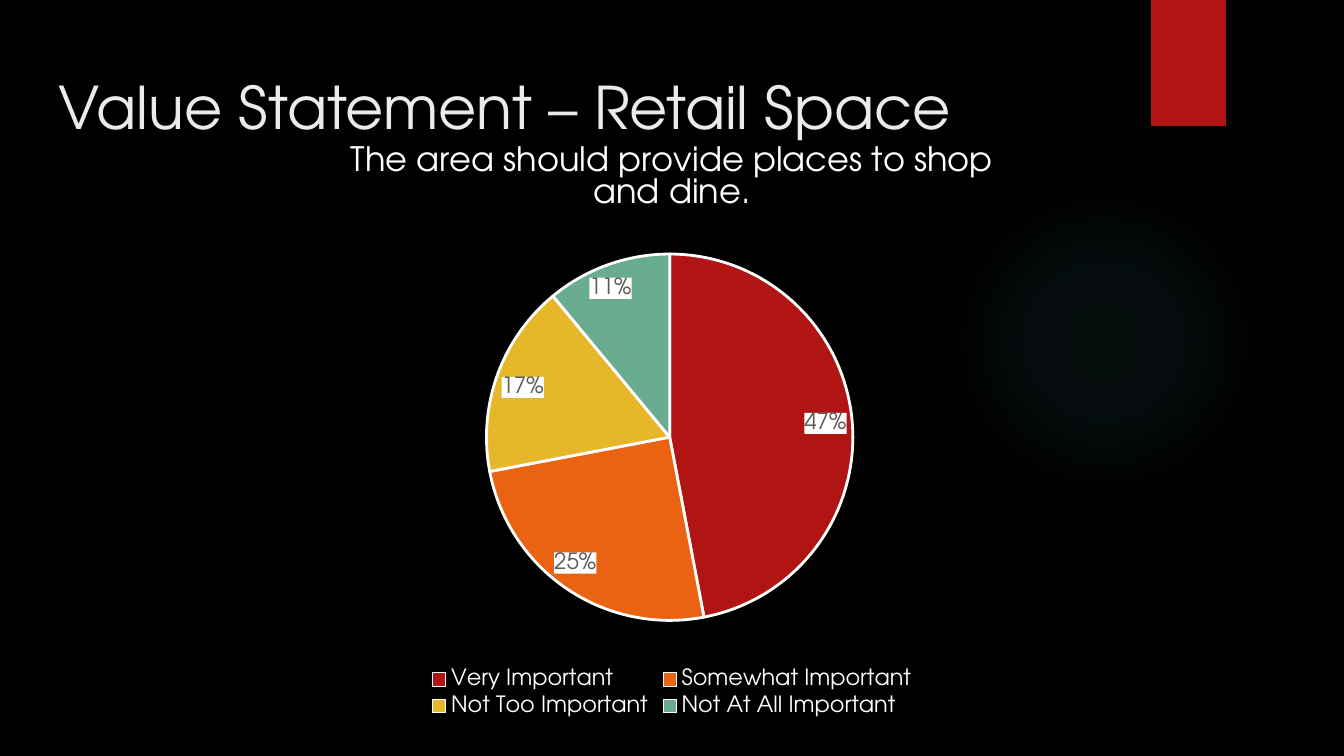
from dataclasses import dataclass

from lxml.etree import SubElement
from pptx import Presentation
from pptx.chart.data import CategoryChartData
from pptx.dml.color import RGBColor as Rgb
from pptx.enum.chart import XL_CHART_TYPE as ChartType
from pptx.enum.chart import XL_LABEL_POSITION as LabelPosition
from pptx.enum.chart import XL_LEGEND_POSITION as LegendPosition
from pptx.enum.shapes import MSO_SHAPE as Shape
from pptx.enum.text import MSO_ANCHOR as Anchor
from pptx.oxml import parse_xml
from pptx.oxml.ns import nsdecls, qn
from pptx.util import Pt


@dataclass(frozen=True)
class Theme:
    font: str = "TeX Gyre Adventor"
    background: str = "000000"
    accent: str = "B01513"
    glow: str = "50B9C1"
    heading: str = "EBEBEB"
    white: str = "FFFFFF"
    label: str = "595959"
    heading_size: float = 31.5
    chart_title_size: float = 18
    chart_size: float = 12


THEME = Theme()
HEADING = "Value Statement – Retail Space"
QUESTION = "The area should provide places to shop and dine."
ANSWERS = [
    ("Very Important", 47, THEME.accent),
    ("Somewhat Important", 25, "EA6312"),
    ("Not Too Important", 17, "E6B729"),
    ("Not At All Important", 11, "6AAC90"),
]

# Boxes are left, top, width, height in px
SLIDE_SIZE = (1344, 756)
GLOW_BOX = (949, 186, 310, 310)
RIBBON_BOX = (1151, 0, 75, 126)
HEADING_BOX = (46, 66, 1252, 85)
CHART_BOX = (224, 117, 896, 605)
HEADING_INSET = 13
GLOW_STOPS = [(0, 7), (36, 6), (69, 0)]  # position and opacity, percent
PLOT_LAYOUT = {"x": 0.293, "y": 0.226, "w": 0.409, "h": 0.607}


def px(length):
    return round(length * 914400 / 134.4)


def place(box):
    return [px(length) for length in box]


def paint(fill, color):
    fill.solid()
    fill.fore_color.rgb = Rgb.from_string(color)


def style(font, size, color):
    font.name = THEME.font
    font.size = Pt(size)
    font.color.rgb = Rgb.from_string(color)


def add_plain_shape(page, kind, box, color):
    shape = page.shapes.add_shape(kind, *place(box))
    shape.shadow.inherit = False
    shape.line.fill.background()
    paint(shape.fill, color)
    return shape


def add_glow(page):
    glow = add_plain_shape(page, Shape.OVAL, GLOW_BOX, THEME.glow)
    stops = "".join(
        f'<a:gs pos="{position * 1000}"><a:srgbClr val="{THEME.glow}">'
        f'<a:alpha val="{opacity * 1000}"/></a:srgbClr></a:gs>'
        for position, opacity in GLOW_STOPS
    )
    gradient = parse_xml(
        f'<a:gradFill {nsdecls("a")}><a:gsLst>{stops}</a:gsLst><a:path path="circle">'
        '<a:fillToRect l="50000" t="50000" r="50000" b="50000"/></a:path></a:gradFill>'
    )
    properties = glow.element.spPr
    properties.replace(properties.find(qn("a:solidFill")), gradient)


def add_ribbon(page):
    ribbon = add_plain_shape(page, Shape.RECTANGLE, RIBBON_BOX, THEME.accent)
    effects = ribbon.element.spPr.find(qn("a:effectLst"))
    effects.append(parse_xml(
        f'<a:outerShdw {nsdecls("a")} blurRad="38100" dist="25400" dir="5400000">'
        '<a:srgbClr val="000000"><a:alpha val="45000"/></a:srgbClr></a:outerShdw>'
    ))


def add_heading(page):
    frame = page.shapes.add_textbox(*place(HEADING_BOX)).text_frame
    frame.word_wrap = True
    frame.vertical_anchor = Anchor.TOP
    frame.margin_left = frame.margin_right = px(HEADING_INSET)
    frame.margin_top = frame.margin_bottom = px(HEADING_INSET)
    para = frame.paragraphs[0]
    para.text = HEADING
    para.line_spacing = 0.9
    style(para.font, THEME.heading_size, THEME.heading)


def fix_plot_area(chart):
    """Pin the inner plot area to its share of the chart."""
    plot_area = chart.element.find(".//" + qn("c:plotArea"))
    layout = plot_area.find(qn("c:layout"))
    if layout is None:
        layout = plot_area.makeelement(qn("c:layout"))
        plot_area.insert(0, layout)
    manual = SubElement(layout, qn("c:manualLayout"))
    settings = {"layoutTarget": "inner", "xMode": "edge", "yMode": "edge", **PLOT_LAYOUT}
    for name, value in settings.items():
        SubElement(manual, qn(f"c:{name}")).set("val", str(value))


def add_pie(page):
    names, values, colors = zip(*ANSWERS)
    data = CategoryChartData()
    data.categories = names
    data.add_series("Series 1", values)
    chart = page.shapes.add_chart(ChartType.PIE, *place(CHART_BOX), data).chart
    style(chart.font, THEME.chart_size, THEME.white)

    chart.has_title = True
    title = chart.chart_title
    title.include_in_layout = False
    para = title.text_frame.paragraphs[0]
    para.text = QUESTION
    para.font.bold = False
    style(para.font, THEME.chart_title_size, THEME.white)

    chart.has_legend = True
    chart.legend.position = LegendPosition.BOTTOM
    chart.legend.include_in_layout = False
    style(chart.legend.font, THEME.chart_size, THEME.white)

    plot = chart.plots[0]
    plot.vary_by_categories = True
    for index, color in enumerate(colors):
        slice_format = plot.series[0].points[index].format
        paint(slice_format.fill, color)
        paint(slice_format.line.fill, THEME.white)
        slice_format.line.width = Pt(1.5)

    labels = plot.series[0].data_labels
    labels.show_percentage = True
    labels.show_value = False
    labels.number_format = "0%"
    labels.number_format_is_linked = False
    labels.position = LabelPosition.BEST_FIT
    style(labels.font, THEME.chart_size, THEME.label)
    label_box = parse_xml(
        f'<c:spPr {nsdecls("c", "a")}><a:solidFill><a:srgbClr val="{THEME.white}"/>'
        "</a:solidFill></c:spPr>"
    )
    labels.font  # text properties follow the box in the schema
    labels._element.find(qn("c:txPr")).addprevious(label_box)
    fix_plot_area(chart)


def main():
    deck = Presentation()
    deck.slide_width, deck.slide_height = place(SLIDE_SIZE)
    page = deck.slides.add_slide(deck.slide_layouts[6])
    paint(page.background.fill, THEME.background)
    add_glow(page)
    add_ribbon(page)
    add_heading(page)
    add_pie(page)
    deck.save("out.pptx")


if __name__ == "__main__":
    main()
